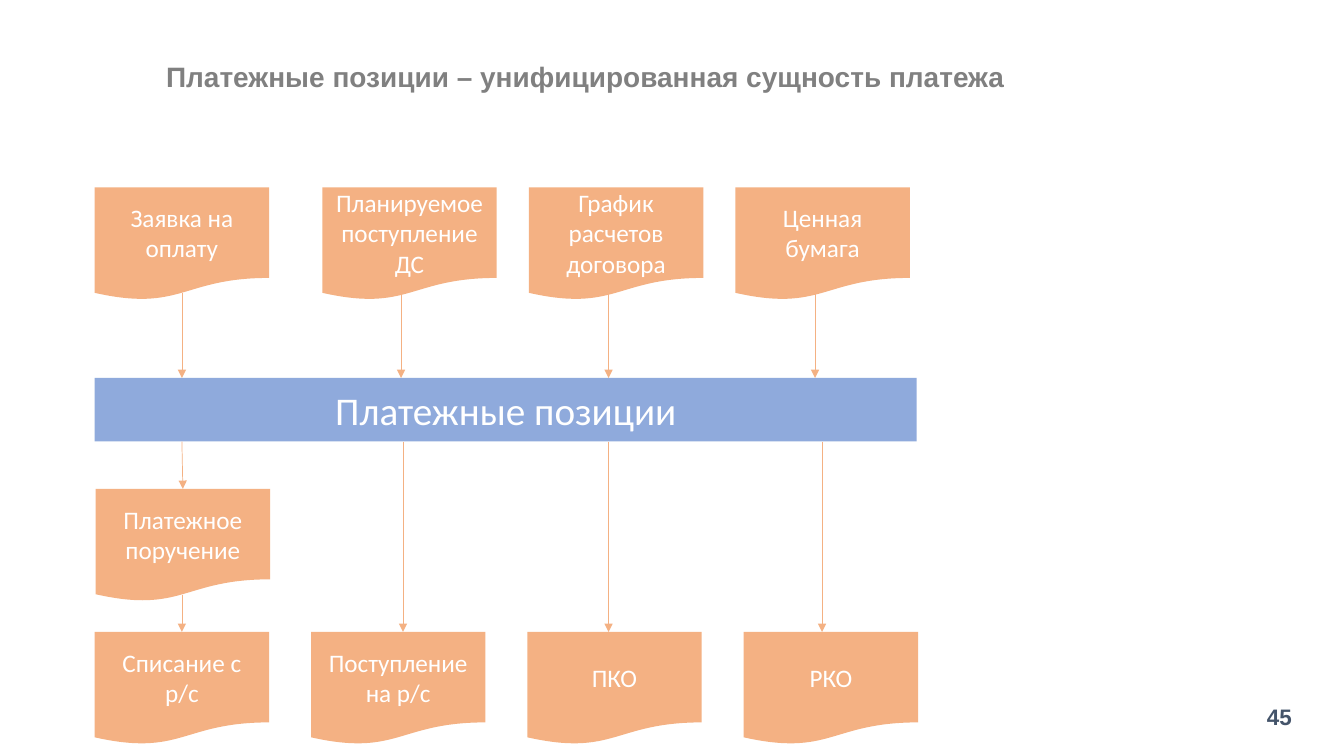
"""Build the slide on payment positions as the unified payment entity."""
from lxml import etree
from pptx import Presentation
from pptx.dml.color import RGBColor
from pptx.enum.shapes import MSO_CONNECTOR, MSO_SHAPE
from pptx.enum.text import MSO_ANCHOR, PP_ALIGN
from pptx.oxml.ns import qn
from pptx.util import Pt

DOCUMENT = MSO_SHAPE.FLOWCHART_DOCUMENT
RECTANGLE = MSO_SHAPE.RECTANGLE
STRAIGHT = MSO_CONNECTOR.STRAIGHT
MIDDLE = MSO_ANCHOR.MIDDLE
LEFT, CENTER, RIGHT = PP_ALIGN.LEFT, PP_ALIGN.CENTER, PP_ALIGN.RIGHT

ORANGE, BLUE, WHITE = "F4B183", "8FAADC", "FFFFFF"
GRAY, NAVY = "808080", "44546A"
MARGIN = 67.7
DOCUMENT_WIDTH, DOCUMENT_HEIGHT = 124.6, 80.6
WAVE_OFFSET = 75.5
SOURCE_TOP, BAR_TOP, ORDER_TOP, RESULT_TOP = 133.9, 270, 349.2, 451.4
BAR_HEIGHT = 45.4
BAR_BOTTOM = BAR_TOP + BAR_HEIGHT
RESULT_STEP = 154.6


def set_text(shape, text, font_name, size, color, alignment, bold=False):
    frame = shape.text_frame
    frame.word_wrap = True
    frame.vertical_anchor = MIDDLE
    paragraph = frame.paragraphs[0]
    paragraph.text = text
    paragraph.alignment = alignment
    font = paragraph.font
    font.name, font.size, font.bold = font_name, Pt(size), bold
    font.color.rgb = RGBColor.from_string(color)
    return paragraph


presentation = Presentation()
presentation.slide_width = Pt(960.5)
presentation.slide_height = Pt(540)
slide = presentation.slides.add_slide(presentation.slide_layouts[6])

title = slide.shapes.add_textbox(Pt(111.6), Pt(3.6), Pt(782.6), Pt(104.4))
paragraph = set_text(title, "Платежные позиции – унифицированная сущность платежа",
                     "Arial", 20, GRAY, LEFT, True)
paragraph.line_spacing = 0.9

page_number = slide.shapes.add_textbox(Pt(858.2), Pt(496.8), Pt(72), Pt(28.1))
paragraph = set_text(page_number, "45", "Arial", 16, NAVY, RIGHT, True)
paragraph.line_spacing = 1.1

sources = [
    ("Заявка на оплату", MARGIN),
    ("Планируемое поступление ДС", 230.4),
    ("График расчетов договора", 378),
    ("Ценная бумага", 525.6),
]
results = ["Списание с р/с", "Поступление на р/с", "ПКО", "РКО"]

blocks = [(text, left, SOURCE_TOP) for text, left in sources]
blocks.append(("Платежное поручение", MARGIN + 0.7, ORDER_TOP))
blocks += [(text, MARGIN + index * RESULT_STEP, RESULT_TOP)
           for index, text in enumerate(results)]
blocks = [(DOCUMENT, text, left, top, DOCUMENT_WIDTH, DOCUMENT_HEIGHT, ORANGE, 18)
          for text, left, top in blocks]
blocks.append((RECTANGLE, "Платежные позиции", MARGIN, BAR_TOP,
               587.5, BAR_HEIGHT, BLUE, 28))

shapes = {}
for kind, text, left, top, width, height, fill, size in blocks:
    shape = slide.shapes.add_shape(kind, Pt(left), Pt(top), Pt(width), Pt(height))
    shape.shadow.inherit = False
    shape.fill.solid()
    shape.fill.fore_color.rgb = RGBColor.from_string(fill)
    shape.line.fill.background()
    set_text(shape, text, "Calibri", size, WHITE, CENTER)
    shapes[text] = shape

first_center = MARGIN + DOCUMENT_WIDTH / 2
arrows = [(x, SOURCE_TOP + WAVE_OFFSET, BAR_TOP, None)
          for x in (first_center, 286.6, 434.9, 582.5)]
arrows += [(x, BAR_BOTTOM, RESULT_TOP, None) for x in (288, 434.9, 587.5)]
arrows += [
    (first_center, BAR_BOTTOM, ORDER_TOP, "Платежное поручение"),
    (first_center, ORDER_TOP + WAVE_OFFSET, RESULT_TOP, "Списание с р/с"),
]
for x, start, end, target in arrows:
    arrow = slide.shapes.add_connector(STRAIGHT, Pt(x), Pt(start), Pt(x), Pt(end))
    if target:
        arrow.end_connect(shapes[target], 0)
    arrow.line.color.rgb = RGBColor.from_string(ORANGE)
    arrow.line.width = Pt(0.5)
    etree.SubElement(arrow.line._get_or_add_ln(), qn("a:tailEnd"), type="triangle")
    etree.SubElement(arrow._element.spPr, qn("a:effectLst"))

presentation.save("out.pptx")
